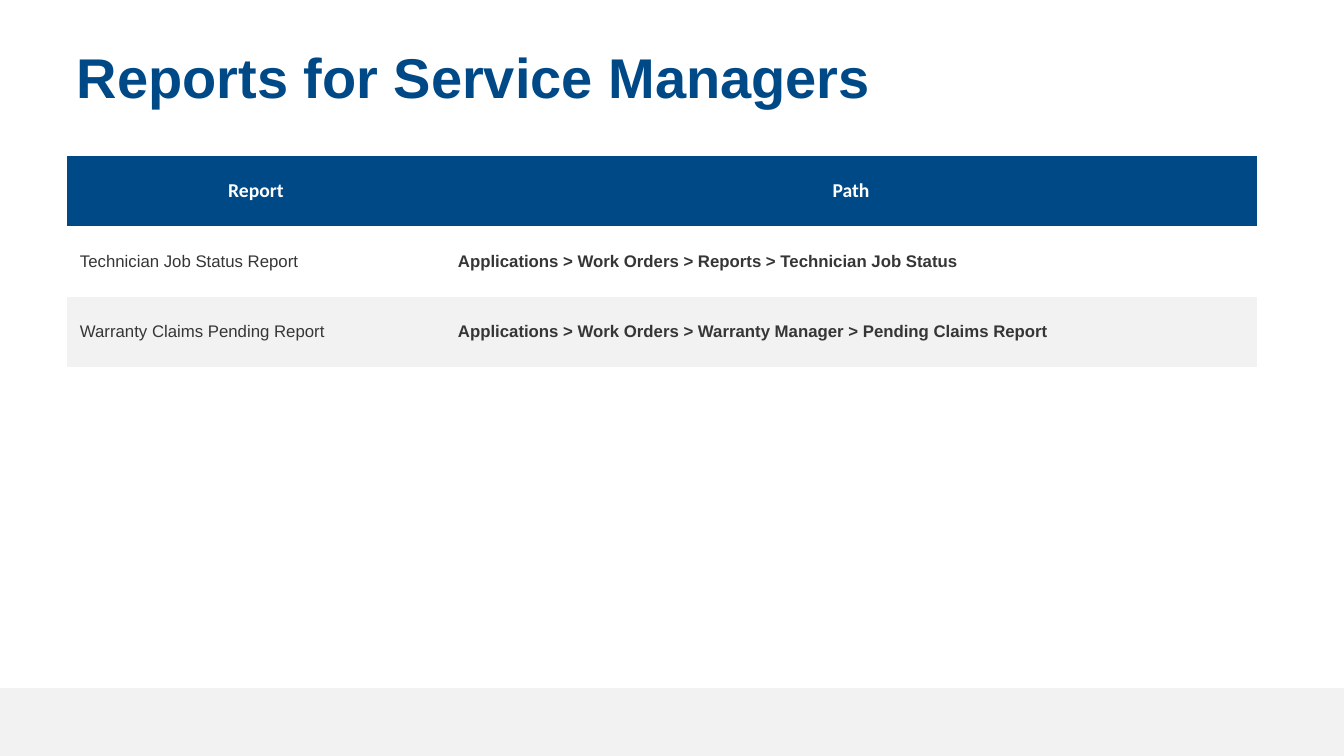
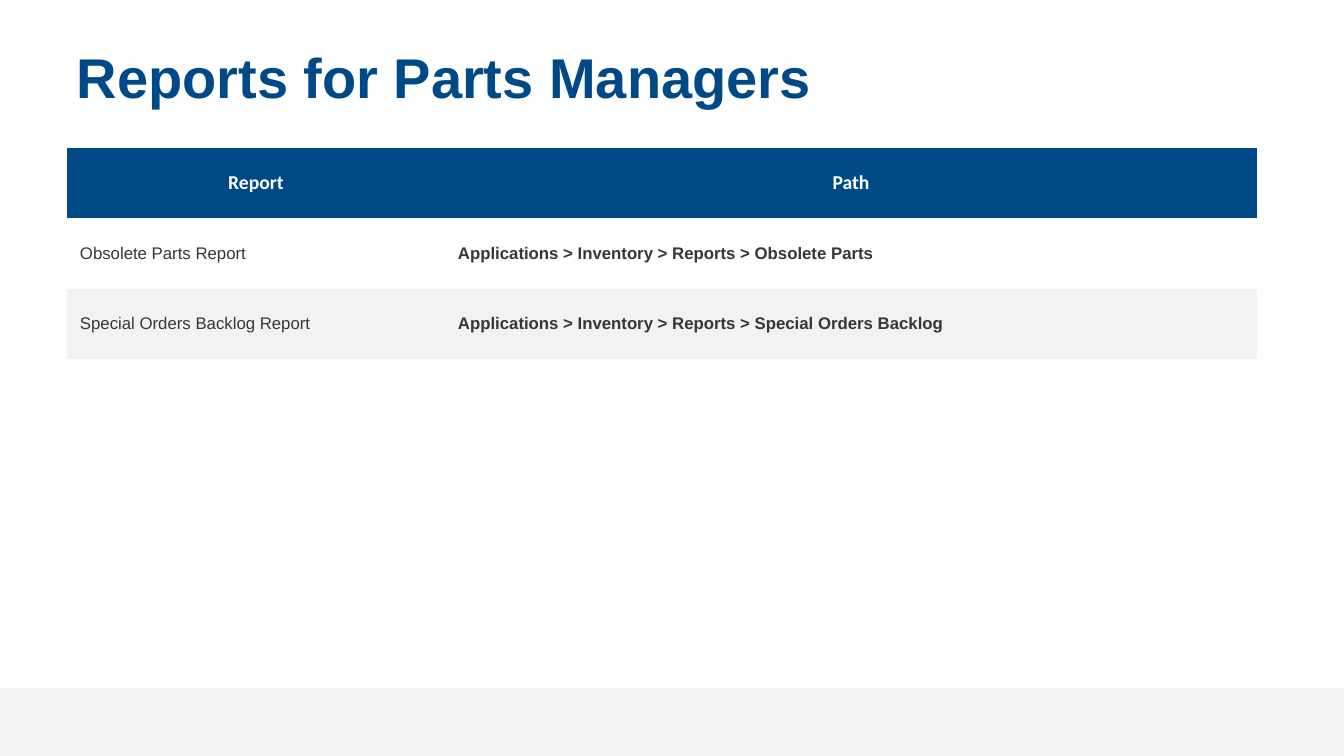
from pptx import Presentation
from pptx.dml.color import RGBColor
from pptx.enum.shapes import MSO_SHAPE
from pptx.enum.text import MSO_ANCHOR, PP_ALIGN
from pptx.util import Emu, Pt

SLIDES = [
    {
        "title": "Reports for Service Managers",
        "table_top": 156,
        "reports": [
            ("Technician Job Status Report",
             "Applications > Work Orders > Reports > Technician Job Status"),
            ("Warranty Claims Pending Report",
             "Applications > Work Orders > Warranty Manager > Pending Claims Report"),
        ],
    },
    {
        "title": "Reports for Parts Managers",
        "table_top": 148,
        "reports": [
            ("Obsolete Parts Report",
             "Applications > Inventory > Reports > Obsolete Parts"),
            ("Special Orders Backlog Report",
             "Applications > Inventory > Reports > Special Orders Backlog"),
        ],
    },
]
HEADER = ("Report", "Path")

BLUE = RGBColor(0x00, 0x49, 0x87)
GRAY = RGBColor(0xF2, 0xF2, 0xF2)
WHITE = RGBColor(0xFF, 0xFF, 0xFF)
DARK = RGBColor(0x36, 0x36, 0x36)

SLIDE_WIDTH, SLIDE_HEIGHT = 1344, 756
BAND_HEIGHT = 68
LEFT = 67
TITLE_TOP, TITLE_WIDTH, TITLE_HEIGHT = 40, 1221, 108
COLUMN_WIDTHS = (378, 812)
TABLE_HEIGHT = 211
CELL_SIDE_MARGIN, CELL_END_MARGIN = 13, 5
NO_STYLE_NO_GRID = "{2D5ABB26-0587-4C30-8999-92F81FD0307C}"


def px(length):
    """Turn pixels, 100.8 to the inch, into EMU."""
    return Emu(round(length * 914400 / 100.8))


def add_run(paragraph, text, font_name, size, color, bold):
    run = paragraph.add_run()
    run.text = text
    run.font.name = font_name
    run.font.size = Pt(size)
    run.font.color.rgb = color
    run.font.bold = bold


def add_footer_band(slide):
    band = slide.shapes.add_shape(
        MSO_SHAPE.RECTANGLE, 0, px(SLIDE_HEIGHT - BAND_HEIGHT),
        px(SLIDE_WIDTH), px(BAND_HEIGHT))
    band.shadow.inherit = False
    band.fill.solid()
    band.fill.fore_color.rgb = GRAY
    band.line.fill.background()


def add_title(slide, title):
    box = slide.shapes.add_textbox(
        px(LEFT), px(TITLE_TOP), px(TITLE_WIDTH), px(TITLE_HEIGHT))
    box.text_frame.word_wrap = True
    paragraph = box.text_frame.paragraphs[0]
    paragraph.line_spacing = Pt(46)
    add_run(paragraph, title, "Arial", 40, BLUE, True)


def fill_cell(cell, text, row, column):
    cell.margin_left = cell.margin_right = px(CELL_SIDE_MARGIN)
    cell.margin_top = cell.margin_bottom = px(CELL_END_MARGIN)
    cell.vertical_anchor = MSO_ANCHOR.MIDDLE
    cell.fill.solid()
    paragraph = cell.text_frame.paragraphs[0]
    if row == 0:
        cell.fill.fore_color.rgb = BLUE
        paragraph.alignment = PP_ALIGN.CENTER
        add_run(paragraph, text, "Calibri", 14, WHITE, True)
    else:
        cell.fill.fore_color.rgb = WHITE if row % 2 else GRAY
        add_run(paragraph, text, "Arial", 12, DARK, column == 1)


def add_report_table(slide, top, reports):
    rows = [HEADER, *reports]
    frame = slide.shapes.add_table(
        len(rows), len(HEADER), px(LEFT), px(top),
        px(sum(COLUMN_WIDTHS)), px(TABLE_HEIGHT))
    table = frame.graphic_data.tbl if hasattr(frame, "graphic_data") else frame.table
    table.horz_banding = False
    style = frame.element.xpath(".//a:tableStyleId")[0]
    style.text = NO_STYLE_NO_GRID
    for column, width in zip(table.columns, COLUMN_WIDTHS):
        column.width = px(width)
    for row, texts in enumerate(rows):
        for column, text in enumerate(texts):
            fill_cell(table.cell(row, column), text, row, column)


def main():
    presentation = Presentation()
    presentation.slide_width = px(SLIDE_WIDTH)
    presentation.slide_height = px(SLIDE_HEIGHT)
    blank_layout = presentation.slide_layouts[6]
    for content in SLIDES:
        slide = presentation.slides.add_slide(blank_layout)
        add_footer_band(slide)
        add_title(slide, content["title"])
        add_report_table(slide, content["table_top"], content["reports"])
    presentation.save("out.pptx")


if __name__ == "__main__":
    main()
